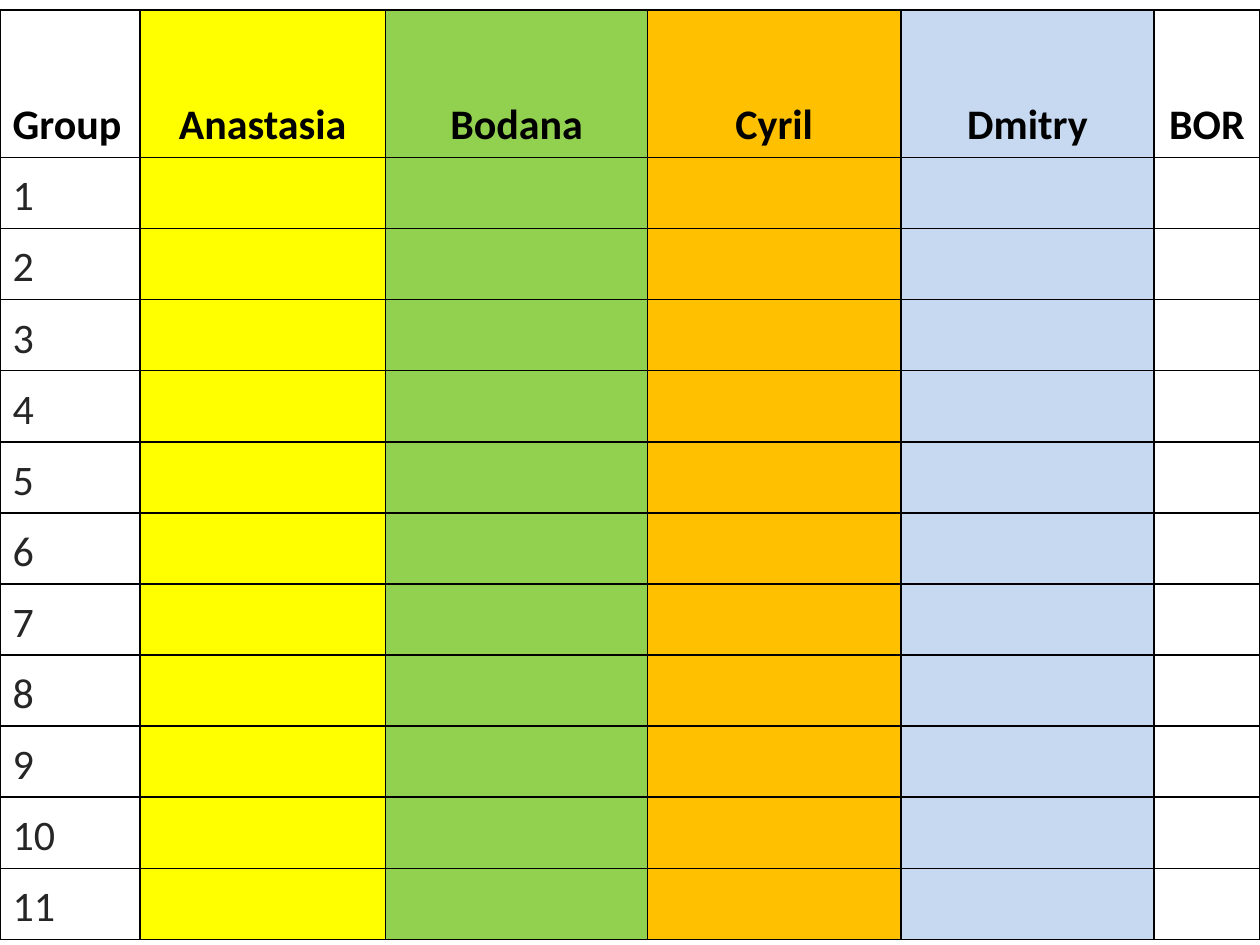
from lxml import etree
from pptx import Presentation
from pptx.dml.color import RGBColor
from pptx.enum.text import MSO_ANCHOR, PP_ALIGN
from pptx.oxml.ns import qn
from pptx.util import Inches, Pt

BOTTOM = MSO_ANCHOR.BOTTOM
LEFT, CENTER = PP_ALIGN.LEFT, PP_ALIGN.CENTER

COLORS = {
    "black": "000000",
    "number": "262626",
    "yellow": "FFFF00",
    "green": "92D050",
    "orange": "FFC000",
    "blue": "C6D9F1",
}

# heading, width in inches, fill, heading alignment
COLUMNS = [
    ("Group", 1.11, None, LEFT),
    ("Anastasia", 1.95, "yellow", CENTER),
    ("Bodana", 2.08, "green", CENTER),
    ("Cyril", 2.01, "orange", CENTER),
    ("Dmitry", 2.01, "blue", CENTER),
    ("BOR", 0.84, None, CENTER),
]
GROUPS = 11
TABLE_TOP, TABLE_HEIGHT, HEADER_HEIGHT = 0.08, 7.38, 1.17


def write_text(tf, text, size=24, color="black", bold=False, align=LEFT):
    p = tf.paragraphs[0]
    p.alignment = align
    r = p.add_run()
    r.text = text
    r.font.name = "Calibri"
    r.font.size = Pt(size)
    r.font.bold = bold
    r.font.color.rgb = RGBColor.from_string(COLORS[color])


class SlideBuilder:
    def __init__(self, prs, border="black", border_width=1):
        self.s = prs.slides.add_slide(prs.slide_layouts[6])
        self.border = COLORS[border]
        self.border_width = Pt(border_width)

    def table(self, left, top, widths, heights):
        frame = self.s.shapes.add_table(
            len(heights), len(widths), Inches(left), Inches(top),
            Inches(sum(widths)), Inches(sum(heights)))
        table = frame.table
        table.horz_banding = False
        for column, width in zip(table.columns, widths):
            column.width = Inches(width)
        for row, height in zip(table.rows, heights):
            row.height = Inches(height)
        return table

    def cell(self, cell, fill=None, text=None, **text_format):
        # Borders go in first: the schema wants them ahead of the fill.
        self.borders(cell)
        if fill:
            cell.fill.solid()
            cell.fill.fore_color.rgb = RGBColor.from_string(COLORS[fill])
        else:
            cell.fill.background()
        cell.vertical_anchor = BOTTOM
        if text:
            write_text(cell.text_frame, text, **text_format)

    def borders(self, cell):
        tc_pr = cell._tc.get_or_add_tcPr()
        for side in ("lnL", "lnR", "lnT", "lnB"):
            ln = etree.SubElement(tc_pr, qn(f"a:{side}"), w=str(self.border_width))
            solid = etree.SubElement(ln, qn("a:solidFill"))
            etree.SubElement(solid, qn("a:srgbClr"), val=self.border)


def main():
    prs = Presentation()
    prs.slide_width, prs.slide_height = Inches(10), Inches(7.5)
    builder = SlideBuilder(prs)

    group_height = (TABLE_HEIGHT - HEADER_HEIGHT) / GROUPS
    table = builder.table(0, TABLE_TOP, [column[1] for column in COLUMNS],
                          [HEADER_HEIGHT] + [group_height] * GROUPS)
    for col, (heading, _, fill, align) in enumerate(COLUMNS):
        builder.cell(table.cell(0, col), fill, heading, bold=True, align=align)
        for group in range(1, GROUPS + 1):
            number = str(group) if col == 0 else None
            builder.cell(table.cell(group, col), fill, number, color="number")

    prs.save("out.pptx")


if __name__ == "__main__":
    main()
